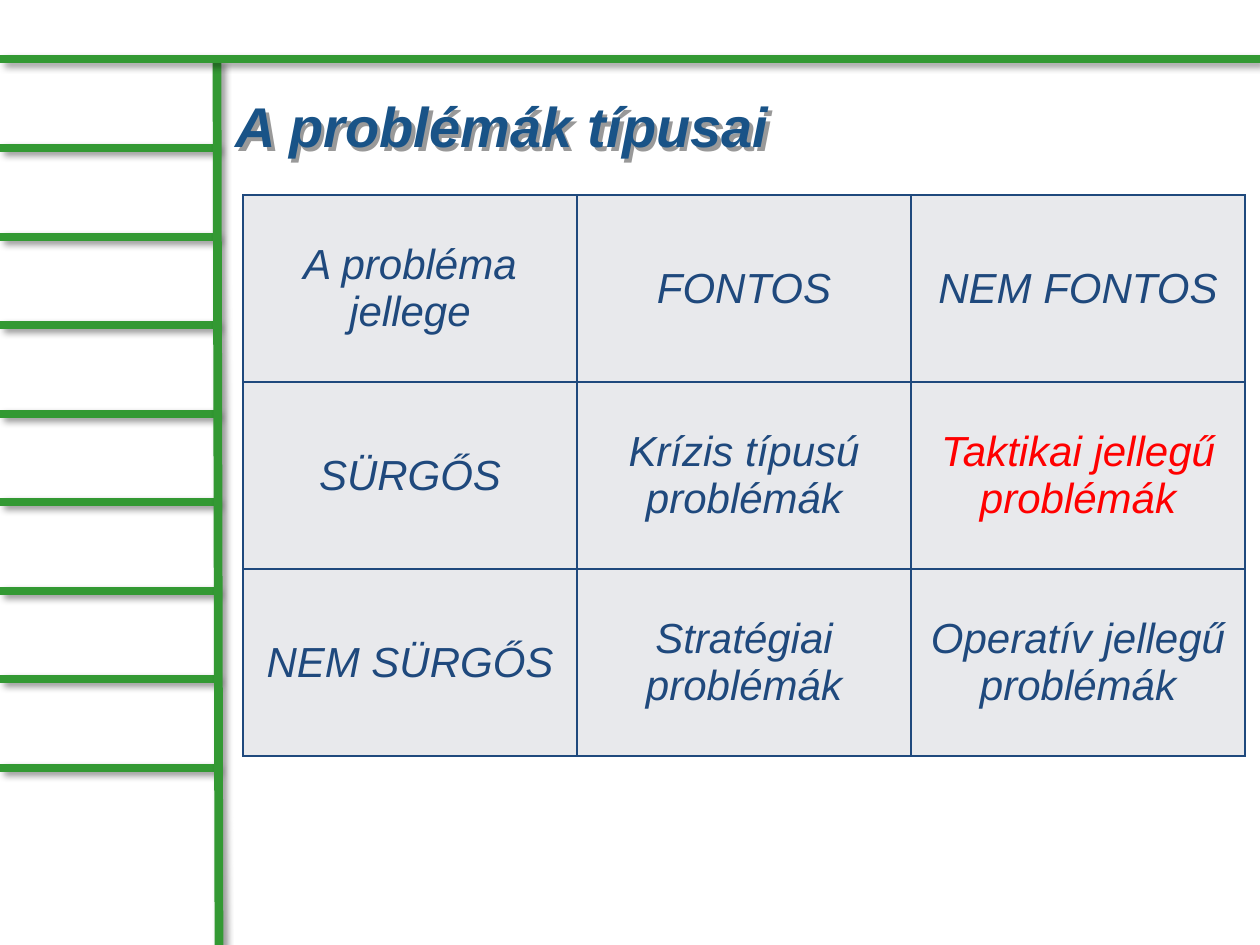
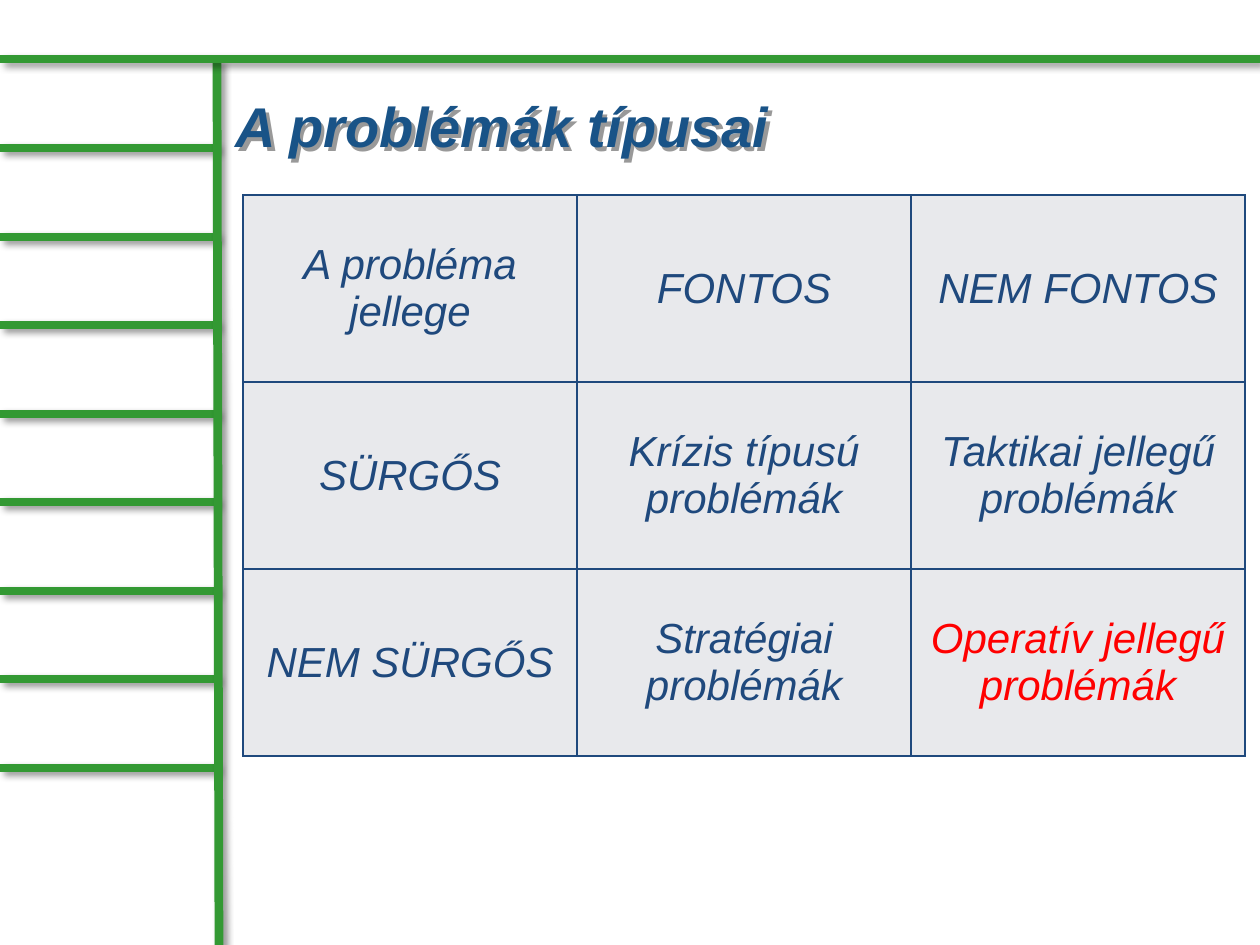
from lxml.etree import SubElement
from pptx import Presentation
from pptx.dml.color import RGBColor
from pptx.enum.shapes import MSO_CONNECTOR
from pptx.enum.text import MSO_ANCHOR, PP_ALIGN
from pptx.oxml.ns import qn
from pptx.util import Emu, Pt

GREEN = RGBColor(0x33, 0x99, 0x33)
TITLE_BLUE = RGBColor(0x19, 0x53, 0x87)
TABLE_BLUE = RGBColor(0x1F, 0x49, 0x7D)
CELL_GREY = RGBColor(0xE8, 0xE9, 0xEC)
RED = RGBColor(0xFF, 0x00, 0x00)
BLACK = RGBColor(0x00, 0x00, 0x00)
FONT = "Arial"

SLIDE_BOX = (0, 0, 1260, 945)
TITLE_BOX = (223, 66, 1002, 118)
TABLE_BOX = (243, 195, 1002, 561)

TITLE = "A problémák típusai"
PROBLEM_TYPES = [
    ["A probléma jellege", "FONTOS", "NEM FONTOS"],
    ["SÜRGŐS", "Krízis típusú problémák", "Taktikai jellegű problémák"],
    ["NEM SÜRGŐS", "Stratégiai problémák", "Operatív jellegű problémák"],
]
HIGHLIGHTED_CELLS = [(1, 2), (2, 2)]


def px(length):
    return Emu(round(length * 914400 / 126))


def add_shadow(shape, blur):
    effects = SubElement(shape._element.spPr, qn("a:effectLst"))
    shadow = SubElement(effects, qn("a:outerShdw"), blurRad=str(Pt(blur)),
                        dist=str(Pt(3)), dir="2700000", algn="tl", rotWithShape="0")
    color = SubElement(shadow, qn("a:srgbClr"), val=str(BLACK))
    SubElement(color, qn("a:alpha"), val="40000")


def style_font(font, size, color, bold=False):
    font.name = FONT
    font.size = Pt(size)
    font.italic = True
    font.bold = bold
    font.color.rgb = color


def add_bar(slide, start_x, start_y, end_x, end_y):
    bar = slide.shapes.add_connector(MSO_CONNECTOR.STRAIGHT, px(start_x), px(start_y),
                                     px(end_x), px(end_y))
    bar.line.color.rgb = GREEN
    bar.line.width = Pt(5)
    add_shadow(bar, 4)


def add_ladder(slide, box, rung_count=8):
    left, top, width, height = box
    rail_x = left + 217
    first_rung, last_rung = top + 148, top + 768
    gap = (last_rung - first_rung) / (rung_count - 1)
    for index in reversed(range(rung_count)):
        rung_y = round(first_rung + index * gap)
        add_bar(slide, left, rung_y, rail_x, rung_y)
    add_bar(slide, rail_x, top + 60, rail_x + 2, top + height)
    add_bar(slide, left, top + 59, left + width, top + 59)


def add_title(slide, box):
    title = slide.shapes.add_textbox(*map(px, box))
    text_frame = title.text_frame
    text_frame.word_wrap = True
    text_frame.vertical_anchor = MSO_ANCHOR.MIDDLE
    text_frame.text = TITLE
    style_font(text_frame.paragraphs[0].runs[0].font, 32, TITLE_BLUE, bold=True)
    add_shadow(title, 0)


def add_cell_borders(cell):
    properties = cell._tc.get_or_add_tcPr()
    for side in ("lnL", "lnR", "lnT", "lnB"):
        border = SubElement(properties, qn(f"a:{side}"), w=str(Pt(1)))
        fill = SubElement(border, qn("a:solidFill"))
        SubElement(fill, qn("a:srgbClr"), val=str(TABLE_BLUE))


def add_problem_table(slide, box, highlighted_cell):
    left, top, width, height = box
    row_count, column_count = len(PROBLEM_TYPES), len(PROBLEM_TYPES[0])
    table = slide.shapes.add_table(row_count, column_count, px(left), px(top),
                                   px(width), px(height)).table
    table.first_row = False
    table.horz_banding = False
    for row_index, texts in enumerate(PROBLEM_TYPES):
        for column_index, text in enumerate(texts):
            cell = table.cell(row_index, column_index)
            add_cell_borders(cell)
            cell.fill.solid()
            cell.fill.fore_color.rgb = CELL_GREY
            cell.vertical_anchor = MSO_ANCHOR.MIDDLE
            cell.text_frame.text = text
            paragraph = cell.text_frame.paragraphs[0]
            paragraph.alignment = PP_ALIGN.CENTER
            highlighted = (row_index, column_index) == highlighted_cell
            style_font(paragraph.runs[0].font, 24, RED if highlighted else TABLE_BLUE)


def add_problem_slide(presentation, highlighted_cell):
    slide = presentation.slides.add_slide(presentation.slide_layouts[6])
    add_ladder(slide, SLIDE_BOX)
    add_title(slide, TITLE_BOX)
    add_problem_table(slide, TABLE_BOX, highlighted_cell)


def main():
    presentation = Presentation()
    presentation.slide_width = px(SLIDE_BOX[2])
    presentation.slide_height = px(SLIDE_BOX[3])
    for highlighted_cell in HIGHLIGHTED_CELLS:
        add_problem_slide(presentation, highlighted_cell)
    presentation.save("out.pptx")


if __name__ == "__main__":
    main()
